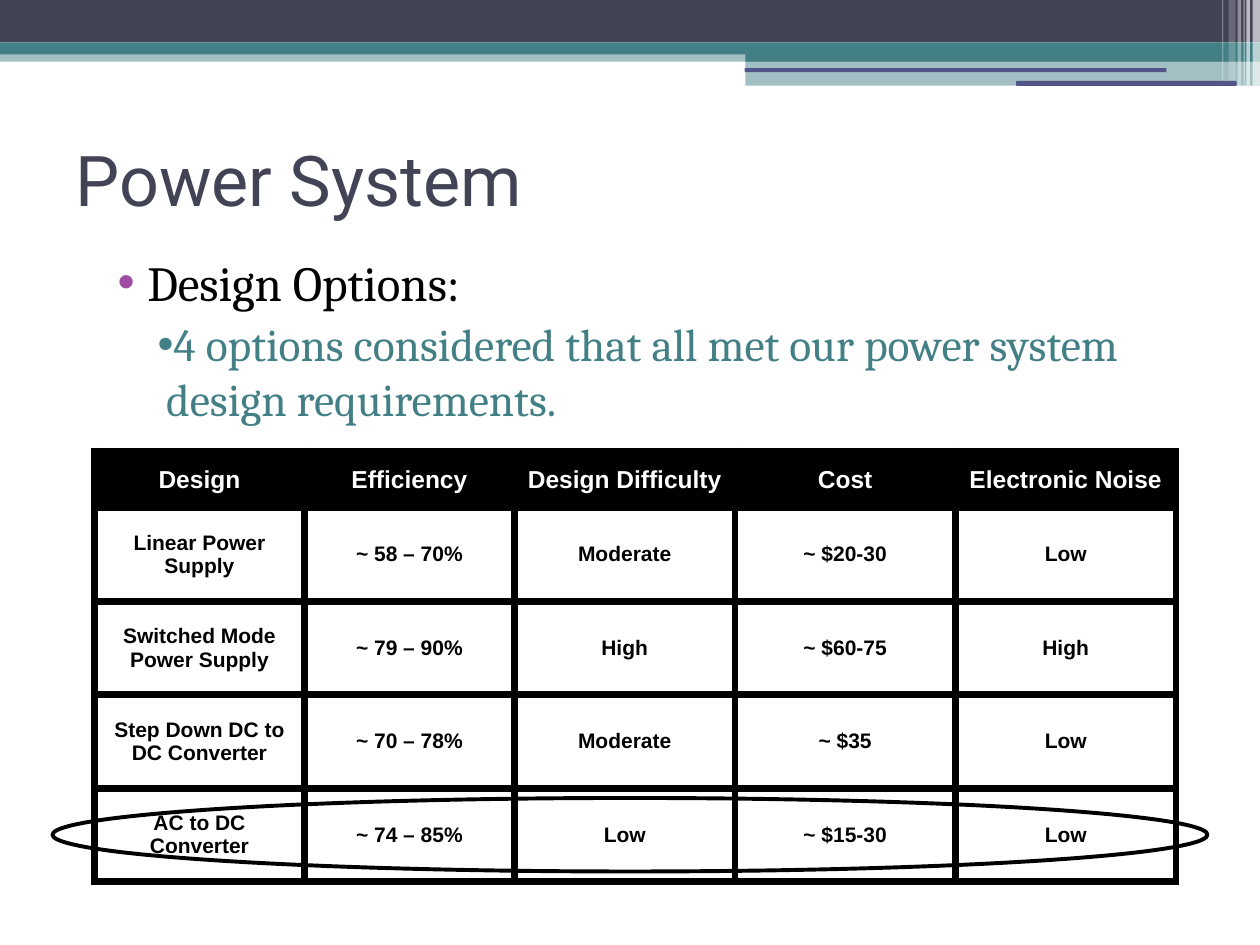
from dataclasses import dataclass

import pptx
import pptx.dml.color
import pptx.enum.shapes
import pptx.enum.text
import pptx.oxml
import pptx.oxml.ns
import pptx.util
from lxml import etree

Pt = pptx.util.Pt
RGBColor = pptx.dml.color.RGBColor
Shapes = pptx.enum.shapes.MSO_SHAPE
Align = pptx.enum.text.PP_ALIGN
Anchor = pptx.enum.text.MSO_ANCHOR
qn = pptx.oxml.ns.qn


@dataclass(frozen=True)
class Theme:
    """Colours, fonts and type sizes of the slide."""
    slate: str = "424456"
    teal: str = "438086"
    indigo: str = "53548A"
    purple: str = "A04DA3"
    white: str = "FFFFFF"
    black: str = "000000"
    title_font: str = "Roboto"
    body_font: str = "Cambria"
    table_font: str = "Arial"
    title_size: float = 40
    body_size: float = 28
    detail_size: float = 26
    header_size: float = 14
    cell_size: float = 12


THEME = Theme()

OPTIONS = [
    ["Design", "Efficiency", "Design Difficulty", "Cost", "Electronic Noise"],
    ["Linear Power Supply", "~ 58 – 70%", "Moderate", "~ $20-30", "Low"],
    ["Switched Mode Power Supply", "~ 79 – 90%", "High", "~ $60-75", "High"],
    ["Step Down DC to DC Converter", "~ 70 – 78%", "Moderate", "~ $35", "Low"],
    ["AC to DC Converter", "~ 74 – 85%", "Low", "~ $15-30", "Low"],
]


def apply(target, values):
    """Set each attribute of the target from a dict."""
    for name, value in values.items():
        setattr(target, name, value)


def format_font(font, name, size, color, bold=False):
    """Give a font its face, size, colour and weight."""
    apply(font, {"name": name, "size": Pt(size), "bold": bold})
    font.color.rgb = RGBColor.from_string(color)


def place(shape, box):
    """Move a shape to a box of left, top, width and height in points."""
    apply(shape, dict(zip(("left", "top", "width", "height"), map(Pt, box))))


def add_bar(slide, box, color, alpha=100, kind=Shapes.RECTANGLE):
    """Add a plain bar, transparent when alpha is below 100 percent."""
    bar = slide.shapes.add_shape(kind, *map(Pt, box))
    bar.shadow.inherit = False
    bar.line.fill.background()
    bar.fill.solid()
    bar.fill.fore_color.rgb = RGBColor.from_string(color)
    if alpha < 100:
        color_element = bar.fill._xPr.find(".//" + qn("a:srgbClr"))
        etree.SubElement(color_element, qn("a:alpha"), val=str(alpha * 1000))


def add_banner(slide, box):
    """Draw the layered bars and the light stripes at the right end."""
    left, top, width, height = box
    right = left + width
    step = left + 426
    add_bar(slide, (left, top + 29, width, 6.2), THEME.teal, 49)
    add_bar(slide, (left, top, width, 24.3), THEME.slate)
    add_bar(slide, (left, top + 24.2, width, 6.9), THEME.teal)
    add_bar(slide, (step, top + 28, right - step, 7.2), THEME.teal)
    add_bar(slide, (step, top + 35, right - step, height - 35), THEME.teal, 49)
    for offset, drop, length, thickness in ((425.6, 39, 241, 2.2), (580.6, 46.2, 126, 2.8)):
        add_bar(slide, (left + offset, top + drop, length, thickness),
                THEME.indigo, kind=Shapes.ROUNDED_RECTANGLE)
    stripes = [(4.2, 4.2, 0, 64), (7.8, 2, 0, 64), (9.4, 0.7, 0, 60),
               (12.8, 2, 0, 40), (18, 4, 3, 20), (21.6, 0.7, 3, 29)]
    for inset, thickness, shortfall, alpha in stripes:
        add_bar(slide, (right - inset, top, thickness, height - shortfall), THEME.white, alpha)


def fill_title(slide, box):
    """Write the heading in the title placeholder."""
    title = slide.shapes.title
    place(title, box)
    title.text_frame.text = "Power System"
    title.text_frame.vertical_anchor = Anchor.MIDDLE
    paragraph = title.text_frame.paragraphs[0]
    paragraph.alignment = Align.LEFT
    format_font(paragraph.runs[0].font, THEME.title_font, THEME.title_size, THEME.slate)


def format_bullet(paragraph, margin, indent, color):
    """Give a paragraph a coloured bullet and a hanging indent."""
    properties = paragraph._p.get_or_add_pPr()
    properties.set("marL", str(Pt(margin)))
    properties.set("indent", str(Pt(indent)))
    bullet_color = etree.SubElement(properties, qn("a:buClr"))
    etree.SubElement(bullet_color, qn("a:srgbClr"), val=color)
    etree.SubElement(properties, qn("a:buFont"), typeface="Arial")
    etree.SubElement(properties, qn("a:buChar"), char="•")


def fill_body(slide, box):
    """Write the bulleted list in the body placeholder."""
    body = slide.placeholders[1]
    place(body, box)
    frame = body.text_frame
    apply(frame, {"margin_top": Pt(7.2), "margin_bottom": Pt(7.2),
                  "auto_size": pptx.enum.text.MSO_AUTO_SIZE.NONE})
    items = [
        ("Design Options:", 41, -17, THEME.body_size, THEME.black, THEME.purple),
        ("4 options considered that all met our power system design requirements.",
         51.8, -5, THEME.detail_size, THEME.teal, THEME.teal),
    ]
    frame.text = "\n".join(item[0] for item in items)
    for level, (paragraph, item) in enumerate(zip(frame.paragraphs, items)):
        text, margin, indent, size, color, bullet_color = item
        apply(paragraph, {"level": level, "space_before": Pt(3)})
        format_bullet(paragraph, margin, indent, bullet_color)
        format_font(paragraph.runs[0].font, THEME.body_font, size, color)


def add_borders(cell, width, color):
    """Draw a solid line on all four sides of a cell."""
    properties = cell._tc.get_or_add_tcPr()
    for side in ("a:lnL", "a:lnR", "a:lnT", "a:lnB"):
        line = etree.SubElement(properties, qn(side), w=str(Pt(width)))
        fill = etree.SubElement(line, qn("a:solidFill"))
        etree.SubElement(fill, qn("a:srgbClr"), val=color)


def format_cell(cell, text, is_header):
    """Write one table cell as header or value."""
    cell.text = text
    cell.vertical_anchor = Anchor.MIDDLE
    add_borders(cell, 4.5, THEME.black)
    cell.fill.solid()
    cell.fill.fore_color.rgb = RGBColor.from_string(THEME.black if is_header else THEME.white)
    paragraph = cell.text_frame.paragraphs[0]
    paragraph.alignment = Align.CENTER
    format_font(paragraph.runs[0].font, THEME.table_font,
                THEME.header_size if is_header else THEME.cell_size,
                THEME.white if is_header else THEME.black, bold=True)


def add_options_table(slide, box):
    """Add the comparison of the design options."""
    frame = slide.shapes.add_table(len(OPTIONS), len(OPTIONS[0]), *map(Pt, box))
    table = frame.table
    apply(table, {"first_row": False, "horz_banding": False})
    narrow, header_height = 120, 32.4
    wide = (box[2] - 2 * narrow) / 3
    row_height = (box[3] - header_height) / (len(OPTIONS) - 1)
    for index, column in enumerate(table.columns):
        column.width = Pt(narrow if index < 2 else wide)
    for index, (row, texts) in enumerate(zip(table.rows, OPTIONS)):
        row.height = Pt(row_height if index else header_height)
        for cell, text in zip(row.cells, texts):
            format_cell(cell, text, index == 0)


def add_choice_ring(slide, box):
    """Circle the chosen option."""
    ring = slide.shapes.add_shape(Shapes.OVAL, *map(Pt, box))
    ring.shadow.inherit = False
    ring.fill.background()
    ring.line.color.rgb = RGBColor.from_string(THEME.black)
    ring.line.width = Pt(2.25)


def main():
    """Build the slide and save it."""
    presentation = pptx.Presentation()
    apply(presentation, {"slide_width": Pt(720), "slide_height": Pt(540)})
    slide = presentation.slides.add_slide(presentation.slide_layouts[1])
    add_banner(slide, (0, 0, 720, 49))
    fill_title(slide, (36, 60, 648, 84))
    fill_body(slide, (36, 137, 648, 340.5))
    add_options_table(slide, (54, 257.8, 618, 246))
    add_choice_ring(slide, (30, 456, 660, 42))
    presentation.save("out.pptx")


if __name__ == "__main__":
    main()
